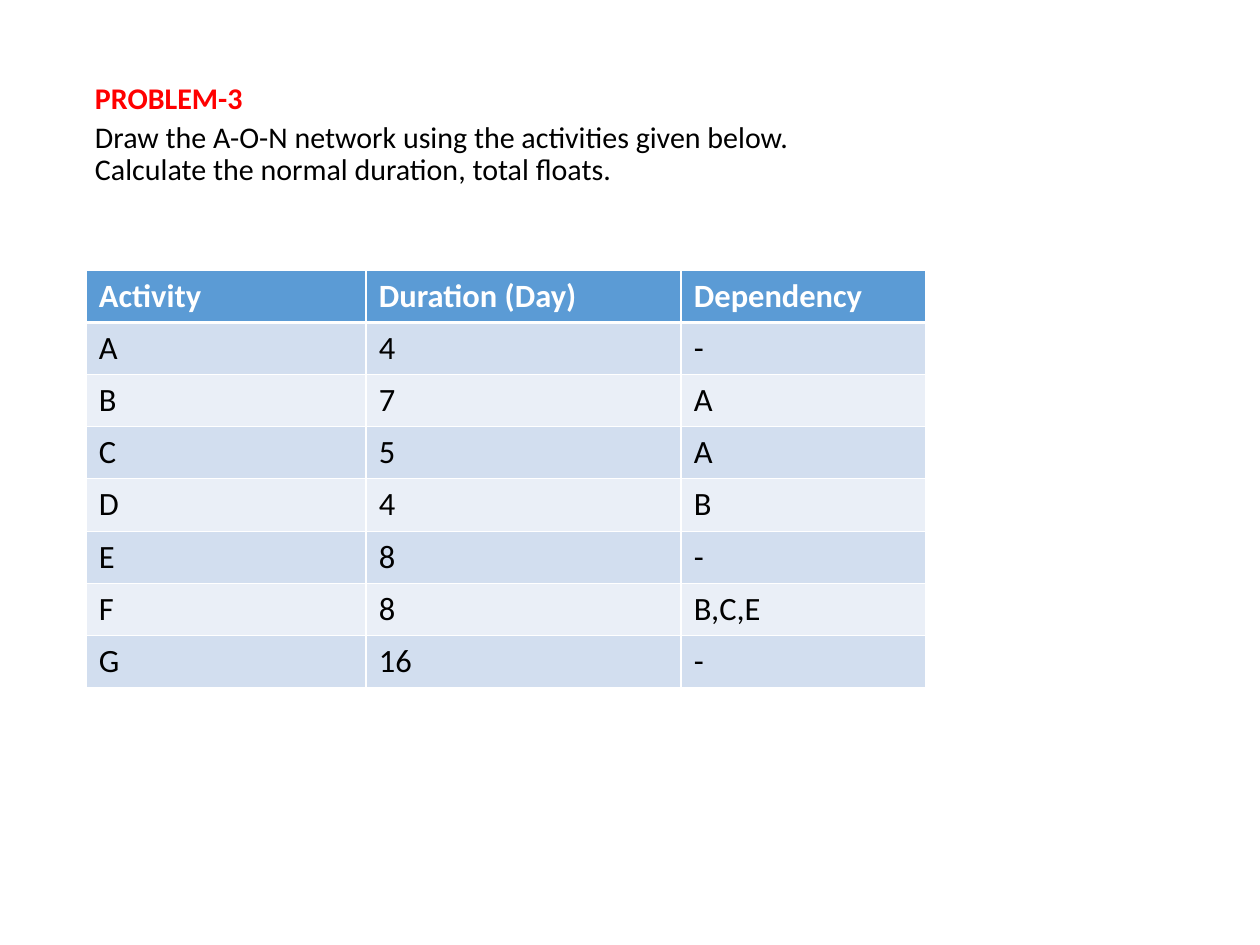
from lxml.etree import SubElement
from pptx import Presentation
from pptx.dml.color import RGBColor
from pptx.enum.text import MSO_ANCHOR as Anchor, PP_ALIGN as Align
from pptx.oxml.ns import qn
from pptx.util import Inches, Pt

HEADING = "PROBLEM-3"
TASK = [
    "Draw the A-O-N network using the activities given below.",
    "Calculate the normal duration, total floats.",
]
ACTIVITIES = [
    ("Activity", "Duration (Day)", "Dependency"),
    ("A", "4", "-"),
    ("B", "7", "A"),
    ("C", "5", "A"),
    ("D", "4", "B"),
    ("E", "8", "-"),
    ("F", "8", "B,C,E"),
    ("G", "16", "-"),
]
COLORS = {
    "heading": "FF0000", "text": "000000", "white": "FFFFFF",
    "header": "5B9BD5", "odd": "D2DEEF", "even": "EAEFF7",
}
FONT = "Calibri"
TITLE_BOX = (86, 50, 1086, 183)
TABLE_LEFT, TABLE_TOP, TABLE_HEIGHT = 86, 270, 418
COLUMN_WIDTHS = [280, 315, 245]


def px(count):
    return Inches(count / 90)


def add_run(paragraph, text, size, color, bold):
    run = paragraph.add_run()
    run.text = text
    run.font.name = FONT
    run.font.size = Pt(size)
    run.font.bold = bold
    run.font.color.rgb = RGBColor.from_string(COLORS[color])


def set_borders(cell, bottom, top):
    properties = cell._tc.get_or_add_tcPr()
    widths = {"a:lnL": 1, "a:lnR": 1, "a:lnT": top, "a:lnB": bottom}
    for position, (side, width) in enumerate(widths.items()):
        line = SubElement(properties, qn(side), w=str(Pt(width)))
        fill = SubElement(line, qn("a:solidFill"))
        SubElement(fill, qn("a:srgbClr"), val=COLORS["white"])
        properties.insert(position, line)


def add_title(slide):
    title = slide.shapes.title
    title.left, title.top, title.width, title.height = map(px, TITLE_BOX)
    frame = title.text_frame
    frame.word_wrap = True
    frame.vertical_anchor = Anchor.MIDDLE
    frame.margin_left = frame.margin_right = px(9)
    frame.margin_top, frame.margin_bottom = px(5), px(17)
    heading, task = frame.paragraphs[0], frame.add_paragraph()
    for paragraph in (heading, task):
        paragraph.alignment = Align.LEFT
        paragraph.line_spacing = 0.9
        paragraph.space_before = Pt(0)
    task.space_before = Pt(5)
    add_run(heading, HEADING, 24, "heading", True)
    for number, sentence in enumerate(TASK):
        if number:
            task.add_line_break()
        add_run(task, sentence, 24, "text", False)


def add_activities(slide):
    table = slide.shapes.add_table(
        len(ACTIVITIES), len(COLUMN_WIDTHS), px(TABLE_LEFT), px(TABLE_TOP),
        px(sum(COLUMN_WIDTHS)), px(TABLE_HEIGHT)).table
    for column, width in zip(table.columns, COLUMN_WIDTHS):
        column.width = px(width)
    for r, activity in enumerate(ACTIVITIES):
        is_header = r == 0
        band = "header" if is_header else "odd" if r % 2 else "even"
        for c, value in enumerate(activity):
            cell = table.cell(r, c)
            cell.margin_left = cell.margin_right = px(13)
            cell.margin_top = cell.margin_bottom = px(6)
            cell.fill.solid()
            cell.fill.fore_color.rgb = RGBColor.from_string(COLORS[band])
            set_borders(cell, 3 if is_header else 1, 3 if r == 1 else 1)
            add_run(cell.text_frame.paragraphs[0], value, 26,
                    "white" if is_header else "text", is_header)


def main():
    deck = Presentation()
    deck.slide_width, deck.slide_height = px(1260), px(945)
    slide = deck.slides.add_slide(deck.slide_layouts[5])
    add_title(slide)
    add_activities(slide)
    deck.save("out.pptx")


if __name__ == "__main__":
    main()
